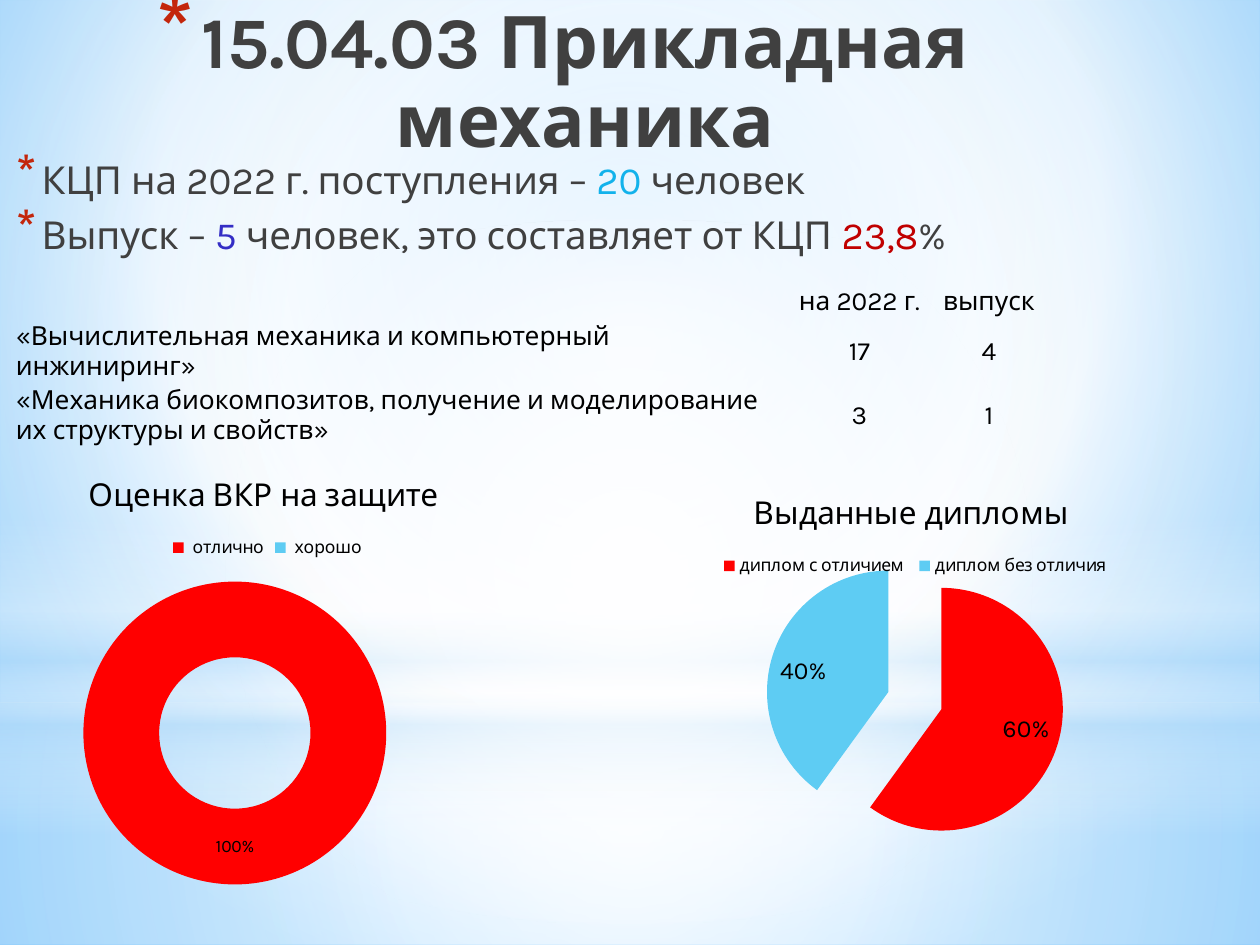
from lxml.etree import SubElement
from pptx import Presentation
from pptx.chart.data import CategoryChartData
from pptx.dml.color import RGBColor
from pptx.enum.chart import XL_CHART_TYPE as ChartType
from pptx.enum.chart import XL_LABEL_POSITION as LabelPosition
from pptx.enum.chart import XL_LEGEND_POSITION as LegendPosition
from pptx.enum.shapes import MSO_SHAPE as Preset
from pptx.enum.text import MSO_ANCHOR as Anchor
from pptx.enum.text import MSO_AUTO_SIZE as AutoSize
from pptx.enum.text import PP_ALIGN as Align
from pptx.oxml import parse_xml
from pptx.oxml.ns import qn
from pptx.util import Emu, Pt

FONT = "Karla"
BLACK, GREY, RED, BLUE = "000000", "404040", "FF0000", "5ECCF3"
DRAWING = 'xmlns:a="http://schemas.openxmlformats.org/drawingml/2006/main"'
CHART = 'xmlns:c="http://schemas.openxmlformats.org/drawingml/2006/chart"'
NO_STYLE = "{2D5ABB26-0587-4C30-8999-92F81FD0307C}"
CENTRE = (50, 50, 50, 50)


def px(length):
    return Emu(round(length * 914400 / 126))


def box(left, top, width, height):
    return px(left), px(top), px(width), px(height)


def rgb(color):
    return RGBColor.from_string(color)


def set_gradient(holder, stops, focus=None):
    """Swap the solid fill in holder for a circular or a downward gradient."""
    stop_xml = "".join(
        f'<a:gs pos="{position * 1000}"><a:srgbClr val="{color}">'
        f'<a:alpha val="{opacity * 1000}"/></a:srgbClr></a:gs>'
        for position, color, opacity in stops)
    if focus:
        sides = " ".join(f'{side}="{value * 1000}"' for side, value in zip("ltrb", focus))
        direction = f'<a:path path="circle"><a:fillToRect {sides}/></a:path>'
    else:
        direction = '<a:lin ang="5400000" scaled="0"/>'
    gradient = parse_xml(f'<a:gradFill {DRAWING} rotWithShape="1">'
                         f'<a:gsLst>{stop_xml}</a:gsLst>{direction}</a:gradFill>')
    solid = holder.find(qn("a:solidFill"))
    solid.getparent().replace(solid, gradient)


def add_text(paragraph, text, size=15, color=BLACK, bold=False, align=None):
    run = paragraph.add_run()
    run.text = text
    run.font.name, run.font.size, run.font.bold = FONT, Pt(size), bold
    run.font.fill.solid()
    run.font.fill.fore_color.rgb = rgb(color)
    if align is not None:
        paragraph.alignment = align


def set_bullet(paragraph, margin, hanging, percent):
    properties = paragraph._p.get_or_add_pPr()
    properties.set("marL", str(px(margin)))
    properties.set("indent", str(-px(hanging)))
    color = SubElement(properties, qn("a:buClr"))
    SubElement(color, qn("a:srgbClr"), val="C3260C")
    SubElement(properties, qn("a:buSzPct"), val=str(percent * 1000))
    SubElement(properties, qn("a:buFontTx"))
    SubElement(properties, qn("a:buChar"), char="*")


def place_text(placeholder, place):
    placeholder.left, placeholder.top, placeholder.width, placeholder.height = place
    frame = placeholder.text_frame
    frame.word_wrap, frame.auto_size = True, AutoSize.NONE
    frame.vertical_anchor = Anchor.TOP
    return frame


def add_backdrop(presentation, slide):
    slide.background.fill.solid()
    set_gradient(slide.element.xpath(".//p:bgPr")[0],
                 [(0, "9ED5FF", 100), (60, "FFFFFF", 100), (100, "5BB9FF", 100)],
                 (20, 10, 20, 60))
    white, sky = "FFFFFF", "B4DCFA"
    layers = [
        (Preset.RECTANGLE, (0, 703, 1260, 242),
         [(0, white, 91), (37, white, 76), (100, sky, 79)], CENTRE),
        (Preset.RECTANGLE, (0, 0, 1260, 703),
         [(0, white, 89), (48, white, 62), (100, sky, 79)], CENTRE),
        (Preset.RECTANGLE, (0, 519, 1260, 315),
         [(0, white, 0), (29, white, 30), (45, sky, 40),
          (55, white, 26), (65, sky, 60), (100, white, 0)], None),
        (Preset.OVAL, (0, 220, 1260, 703), [(0, white, 100), (56, white, 0)], CENTRE),
    ]
    # The layers belong to the slide master
    master_tree = presentation.slide_master.shapes.element
    for number, (preset, place, stops, focus) in enumerate(layers, 101):
        shape = slide.shapes.add_shape(preset, *box(*place))
        shape.shadow.inherit = False
        shape.line.fill.background()
        shape.fill.solid()
        set_gradient(shape.element.spPr, stops, focus)
        shape.element.nvSpPr.cNvPr.set("id", str(number))
        master_tree.append(shape.element)


def add_title(slide):
    title = slide.shapes.title
    paragraph = place_text(title, box(64, 0, 998, 157)).paragraphs[0]
    paragraph.line_spacing = 0.9
    add_text(paragraph, "15.04.03 Прикладная механика", size=41.4, color=GREY,
             bold=True, align=Align.CENTER)
    set_gradient(title.element.xpath(".//a:rPr")[0],
                 [(0, BLACK, 100), (40, GREY, 100), (100, "212745", 65)])
    set_bullet(paragraph, 44, 44, 128)


def add_list(slide, items):
    frame = place_text(slide.placeholders[1], box(-3, 155, 1166, 688))
    for index, parts in enumerate(items):
        paragraph = frame.add_paragraph() if index else frame.paragraphs[0]
        paragraph.line_spacing = 0.9
        paragraph.space_before, paragraph.space_after = Pt(4.4), Pt(3)
        for text, color in parts:
            add_text(paragraph, text, size=22, color=color)
        set_bullet(paragraph, 32, 25, 130)


def add_programme_table(slide, rows):
    widths, heights = (271, 92, 141, 261, 159, 100), (33, 64, 64)
    graphic = slide.shapes.add_table(len(heights), len(widths),
                                     *box(15, 283, sum(widths), sum(heights)))
    table = graphic.table
    table.first_row = table.horz_banding = False
    graphic.element.xpath(".//a:tableStyleId")[0].text = NO_STYLE
    for column, width in zip(table.columns, widths):
        column.width = px(width)
    for row_index, (name, *counts) in enumerate(rows):
        table.rows[row_index].height = px(heights[row_index])
        if name:
            table.cell(row_index, 0).merge(table.cell(row_index, 3))
        for column_index, text in enumerate([name, "", "", "", *counts]):
            cell = table.cell(row_index, column_index)
            cell.fill.background()
            cell.vertical_anchor = Anchor.MIDDLE
            cell.margin_left = cell.margin_right = cell.margin_top = px(1)
            cell.margin_bottom = 0
            add_text(cell.text_frame.paragraphs[0], text,
                     align=Align.CENTER if column_index > 3 else Align.LEFT)


def add_round_chart(slide, kind, place, title, shares, plot, explosion,
                    label_size=10, label_position=None):
    data = CategoryChartData()
    data.categories = list(shares)
    data.add_series("Series 1", list(shares.values()))
    chart = slide.shapes.add_chart(kind, *box(*place), data).chart
    chart.font.name, chart.font.size = FONT, Pt(10)
    chart.font.color.rgb = rgb(BLACK)
    chart.has_title = True
    add_text(chart.chart_title.text_frame.paragraphs[0], title, size=18)
    chart.chart_title.include_in_layout = False
    chart.has_legend = True
    chart.legend.position = LegendPosition.TOP
    chart.legend.include_in_layout = False
    # Slices and their percentages
    pie = chart.plots[0]
    pie.vary_by_categories = True
    for index, color in enumerate((RED, BLUE)):
        fill = pie.series[0].points[index].format.fill
        fill.solid()
        fill.fore_color.rgb = rgb(color)
    pie.has_data_labels = True
    labels = pie.data_labels
    labels.show_percentage, labels.show_value = True, False
    labels.number_format, labels.number_format_is_linked = "0%", False
    labels.font.name, labels.font.size = FONT, Pt(label_size)
    labels.font.color.rgb = rgb(BLACK)
    if label_position is not None:
        labels.position = label_position
    # Gap between slices and place of the plot
    chart.element.xpath(".//c:dPt")[0].addprevious(
        parse_xml(f'<c:explosion {CHART} val="{explosion}"/>'))
    area = chart.element.xpath(".//c:plotArea")[0]
    for layout in area.xpath("./c:layout"):
        area.remove(layout)
    sizes = "".join(f'<c:{key} val="{value}"/>' for key, value in zip("xywh", plot))
    area.insert(0, parse_xml(
        f'<c:layout {CHART}><c:manualLayout><c:layoutTarget val="inner"/>'
        f'<c:xMode val="edge"/><c:yMode val="edge"/>{sizes}</c:manualLayout></c:layout>'))


def main():
    presentation = Presentation()
    presentation.slide_width, presentation.slide_height = px(1260), px(945)
    slide = presentation.slides.add_slide(presentation.slide_layouts[1])
    add_backdrop(presentation, slide)
    add_title(slide)
    add_list(slide, [
        [("КЦП на 2022 г. поступления – ", GREY), ("20 ", "12B2EB"), ("человек", GREY)],
        [("Выпуск – ", GREY), ("5", "342DC5"), (" человек, это составляет от КЦП ", GREY),
         ("23,8", "C00000"), ("%", GREY)],
    ])
    add_programme_table(slide, [
        ("", "на 2022 г.", "выпуск"),
        ("«Вычислительная механика и компьютерный инжиниринг»", "17", "4"),
        ("«Механика биокомпозитов, получение и моделирование их структуры и свойств»",
         "3", "1"),
    ])
    add_round_chart(slide, ChartType.DOUGHNUT, (-95, 452, 725, 456), "Оценка ВКР на защите ",
                    {" отлично": 100, " хорошо": 0}, (0.22, 0.2, 0.47, 0.75), 25)
    add_round_chart(slide, ChartType.PIE, (600, 472, 630, 378), "Выданные дипломы ",
                    {"диплом с отличием ": 60, "диплом без отличия": 40},
                    (0, 0.21, 1, 0.79), 23, label_size=14,
                    label_position=LabelPosition.INSIDE_END)
    presentation.save("out.pptx")


if __name__ == "__main__":
    main()
